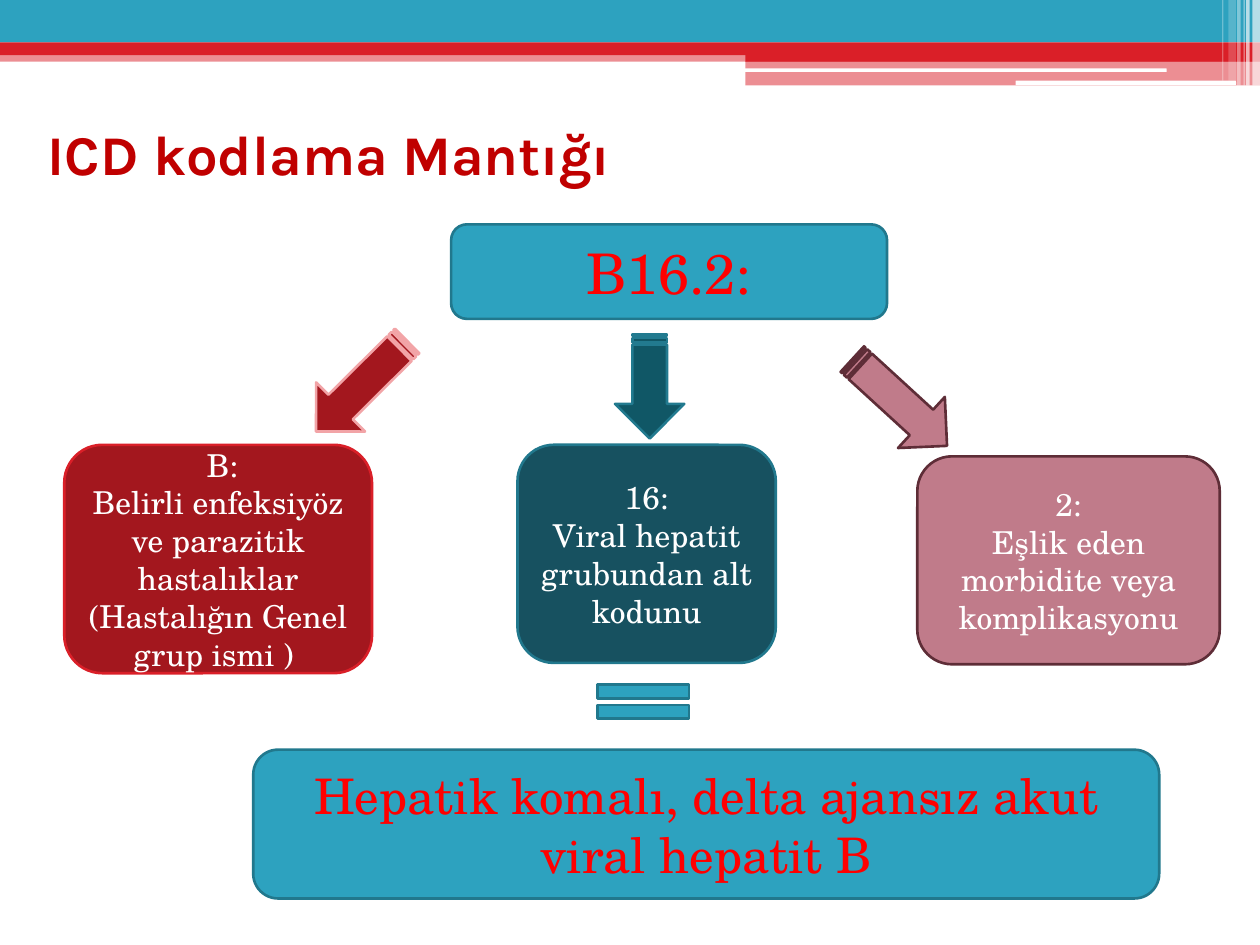
from lxml.etree import SubElement
from pptx import Presentation
from pptx.dml.color import RGBColor
from pptx.enum.shapes import MSO_SHAPE as Shape
from pptx.enum.text import MSO_ANCHOR as Anchor, MSO_AUTO_SIZE as AutoSize, PP_ALIGN as Align
from pptx.oxml import parse_xml
from pptx.oxml.ns import nsdecls, qn
from pptx.util import Pt

TEAL = RGBColor(0x2D, 0xA2, 0xBF)
TEAL_EDGE = RGBColor(0x21, 0x78, 0x8D)
TEAL_DARK = RGBColor(0x17, 0x51, 0x60)
TEAL_ARROW = RGBColor(0x10, 0x57, 0x66)
TEAL_ARROW_EDGE = RGBColor(0x22, 0x7A, 0x8F)
RED = RGBColor(0xDA, 0x1F, 0x28)
RED_DARK = RGBColor(0xA3, 0x17, 0x1E)
RED_PALE = RGBColor(0xF2, 0xA4, 0xA7)
RED_TITLE = RGBColor(0xC0, 0x00, 0x00)
RED_TEXT = RGBColor(0xFF, 0x00, 0x00)
MAUVE = RGBColor(0xC0, 0x7B, 0x8A)
MAUVE_EDGE = RGBColor(0x5E, 0x2D, 0x37)
WHITE = RGBColor(0xFF, 0xFF, 0xFF)
TITLE_OUTLINE = "EE000B"


def write_text(frame, text, size, color, font="TeX Gyre Schola", bold=False,
               align=Align.CENTER, outline=None):
    frame.word_wrap = True
    frame.auto_size = AutoSize.NONE
    frame.vertical_anchor = Anchor.MIDDLE
    for index, line in enumerate(text.split("\n")):
        para = frame.add_paragraph() if index else frame.paragraphs[0]
        para.alignment = align
        span = para.add_run()
        span.text = line
        span.font.name = font
        span.font.size = Pt(size)
        span.font.bold = bold
        span.font.color.rgb = color
        if outline:
            span.font._element.insert(0, parse_xml(
                f'<a:ln {nsdecls("a")} w="12700"><a:solidFill>'
                f'<a:srgbClr val="{outline}"/></a:solidFill></a:ln>'))


class SlideBuilder:
    line_width = 1.5

    def __init__(self, page):
        self.page = page

    def shape(self, kind, place, fill, edge=None, opacity=100):
        shape = self.page.shapes.add_shape(kind, *map(Pt, place))
        shape.shadow.inherit = False
        shape.fill.solid()
        shape.fill.fore_color.rgb = fill
        if opacity < 100:
            color = shape._element.spPr.find(qn("a:solidFill"))[0]
            SubElement(color, qn("a:alpha")).set("val", str(opacity * 1000))
        if edge is None:
            shape.line.fill.background()
        else:
            shape.line.color.rgb = edge
            shape.line.width = Pt(self.line_width)
        return shape

    def bar(self, place, fill, opacity=100, kind=Shape.RECTANGLE):
        self.shape(kind, place, fill, opacity=opacity)

    def box(self, place, fill, edge, text, size, color):
        box = self.shape(Shape.ROUNDED_RECTANGLE, place, fill, edge)
        write_text(box.text_frame, text, size, color)

    def arrow(self, place, angle, fill, edge):
        self.shape(Shape.STRIPED_RIGHT_ARROW, place, fill, edge).rotation = angle

    def equals(self, place, fill, edge):
        self.shape(Shape.MATH_EQUAL, place, fill, edge)

    def title(self, place, text, **style):
        title = self.page.shapes.title
        title.left, title.top, title.width, title.height = map(Pt, place)
        write_text(title.text_frame, text, **style)

    def header(self):
        self.bar((0, 28.8, 720, 6.5), RED, 50)
        self.bar((0, 0, 720, 24.3), TEAL)
        self.bar((0, 24.3, 720, 7.2), RED)
        self.bar((425.9, 28.1, 294.1, 7.2), RED)
        self.bar((425.9, 34.9, 294.1, 13.9), RED, 50)
        for place in ((425.5, 39.1, 241.2, 2), (580.3, 46.1, 126, 2.6)):
            self.bar(place, WHITE, kind=Shape.ROUNDED_RECTANGLE)
        for left, width, height, opacity in (
            (715.7, 4.3, 49, 65),
            (712.1, 2, 49, 65),
            (710.6, 0.7, 49, 60),
            (707, 2, 49, 40),
            (702, 4.3, 46.1, 20),
            (698.4, 0.7, 46.1, 30),
        ):
            self.bar((left, 0, width, height), WHITE, opacity)


def main():
    deck = Presentation()
    deck.slide_width, deck.slide_height = Pt(720), Pt(540)
    slide = SlideBuilder(deck.slides.add_slide(deck.slide_layouts[5]))

    slide.header()
    slide.title((20.2, 56.2, 632.9, 62.6), "ICD kodlama Mantığı", size=32,
                color=RED_TITLE, font="Karla", bold=True, align=Align.LEFT,
                outline=TITLE_OUTLINE)

    slide.box((257.8, 128.2, 249.1, 54), TEAL, TEAL_EDGE, "B16.2:", 32, RED_TEXT)
    for place, fill, edge, text in (
        ((36.7, 254.2, 175.9, 130.5), RED_DARK, RED,
         " B:\nBelirli enfeksiyöz ve parazitik hastalıklar (Hastalığın Genel grup ismi ) "),
        ((524.2, 260.8, 172.8, 118.8), MAUVE, MAUVE_EDGE,
         "2:\nEşlik eden morbidite veya komplikasyonu"),
        ((295.7, 254.2, 147.6, 124.6), TEAL_DARK, TEAL_EDGE,
         "16:\nViral hepatit grubundan alt kodunu"),
    ):
        slide.box(place, fill, edge, text, 18, WHITE)

    slide.arrow((169.9, 200.9, 73.4, 39.6), 135.2, RED_DARK, RED_PALE)
    slide.arrow((477.4, 210.2, 73.4, 39.6), 42.5, MAUVE, MAUVE_EDGE)
    slide.arrow((341.3, 200.9, 59.8, 39.6), 90, TEAL_ARROW, TEAL_ARROW_EDGE)

    slide.box((144.7, 428.4, 517.7, 85), TEAL, TEAL_EDGE,
              "Hepatik komalı, delta ajansız akut viral hepatit B", 28, RED_TEXT)
    slide.equals((331.9, 384.5, 71.3, 33.1), TEAL, TEAL_EDGE)

    deck.save("out.pptx")


if __name__ == "__main__":
    main()
